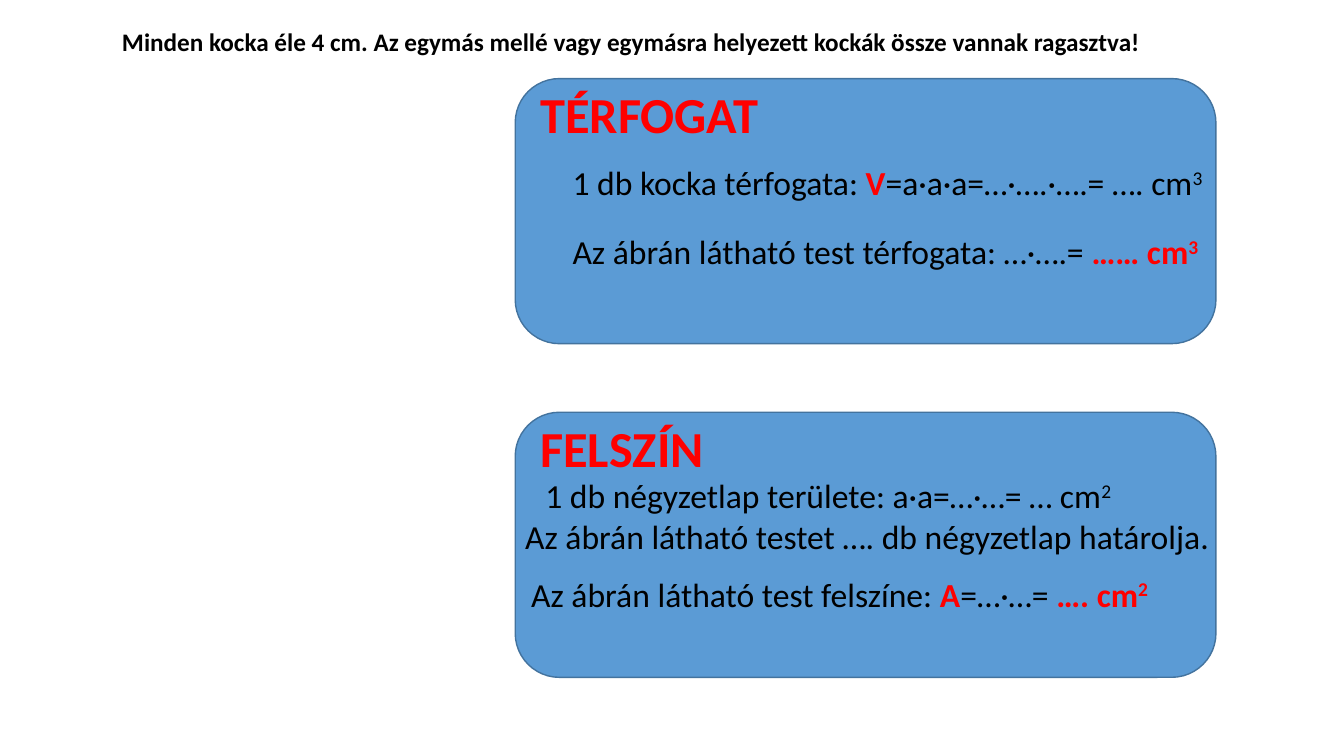
from pptx import Presentation
from pptx.dml.color import RGBColor
from pptx.enum import shapes, text
from pptx.util import Inches, Pt

BLACK = RGBColor(0x00, 0x00, 0x00)
RED = RGBColor(0xFF, 0x00, 0x00)
BLUE = RGBColor(0x5B, 0x9B, 0xD5)
DARK_BLUE = RGBColor(0x43, 0x73, 0x9E)

PLAIN, KEY, SUP, KEY_SUP = "plain", "key", "sup", "key_sup"


class Worksheet:
    font = "Calibri"
    heading_size, line_size, title_size = 36, 24, 18
    panel_left, panel_width, panel_height = 5.11, 6.95, 2.63

    def __init__(self, prs):
        self.s = prs.slides.add_slide(prs.slide_layouts[5])

    def place(self, sp, left, top, width, height):
        box = {"left": left, "top": top, "width": width, "height": height}
        for name, value in box.items():
            setattr(sp, name, Inches(value))

    def set_runs(self, sp, runs, size, bold=False):
        """Fill a one-line shape with (wording, style) runs."""
        tf = sp.text_frame
        frame = {"word_wrap": False, "auto_size": text.MSO_AUTO_SIZE.SHAPE_TO_FIT_TEXT,
                 "vertical_anchor": text.MSO_ANCHOR.TOP}
        for name, value in frame.items():
            setattr(tf, name, value)
        p = tf.paragraphs[0]
        p.alignment = text.PP_ALIGN.LEFT
        for wording, style in runs:
            r = p.add_run()
            r.text = wording
            key = style in (KEY, KEY_SUP)
            font = {"name": self.font, "size": Pt(size), "bold": bold or key}
            for name, value in font.items():
                setattr(r.font, name, value)
            r.font.color.rgb = RED if key else BLACK
            if style in (SUP, KEY_SUP):
                r._r.get_or_add_rPr().set("baseline", "30000")

    def title(self, wording, *box):
        sp = self.s.shapes.title
        self.place(sp, *box)
        self.set_runs(sp, [(wording, PLAIN)], self.title_size, bold=True)

    def line(self, group, runs, size, left, top, width, height):
        sp = group.shapes.add_textbox(*map(Inches, (left, top, width, height)))
        self.set_runs(sp, runs, size)

    def panel(self, top, heading, heading_width, lines):
        """Add a grouped rounded panel; each line is (left, offset, width, runs)."""
        group = self.s.shapes.add_group_shape()
        sp = group.shapes.add_shape(
            shapes.MSO_SHAPE.ROUNDED_RECTANGLE, Inches(self.panel_left), Inches(top),
            Inches(self.panel_width), Inches(self.panel_height))
        sp.shadow.inherit = False
        sp.fill.solid()
        sp.fill.fore_color.rgb = BLUE
        sp.line.color.rgb = DARK_BLUE
        sp.line.width = Pt(1)
        self.line(group, [(heading, KEY)], self.heading_size, 5.26, top, heading_width, 0.71)
        for left, offset, width, runs in lines:
            self.line(group, runs, self.line_size, left, top + offset, width, 0.5)


def main():
    prs = Presentation()
    prs.slide_width, prs.slide_height = Inches(13.33), Inches(7.5)
    sheet = Worksheet(prs)
    sheet.title("Minden kocka éle 4 cm. Az egymás mellé vagy egymásra helyezett "
                "kockák össze vannak ragasztva!", 1.11, 0.21, 10.44, 0.4)
    sheet.panel(0.78, "TÉRFOGAT", 2.39, [
        (5.58, 0.78, 6.52, [("1 db kocka térfogata: ", PLAIN), ("V", KEY),
                            ("=a·a·a=…·….·….= …. cm", PLAIN), ("3", SUP)]),
        (5.58, 1.46, 6.48, [("Az ábrán látható test térfogata: …·….= ", PLAIN),
                            ("…… cm", KEY), ("3", KEY_SUP)]),
    ])
    sheet.panel(4.09, "FELSZÍN", 1.84, [
        (5.31, 0.57, 5.9, [("1 db négyzetlap területe: a·a=…·…= … cm", PLAIN), ("2", SUP)]),
        (5.11, 0.98, 7.07, [("Az ábrán látható testet …. db négyzetlap határolja.", PLAIN)]),
        (5.17, 1.55, 6.33, [("Az ábrán látható test felszíne: ", PLAIN), ("A", KEY),
                            ("=…·…= ", PLAIN), ("…. cm", KEY), ("2", KEY_SUP)]),
    ])
    prs.save("out.pptx")


if __name__ == "__main__":
    main()
